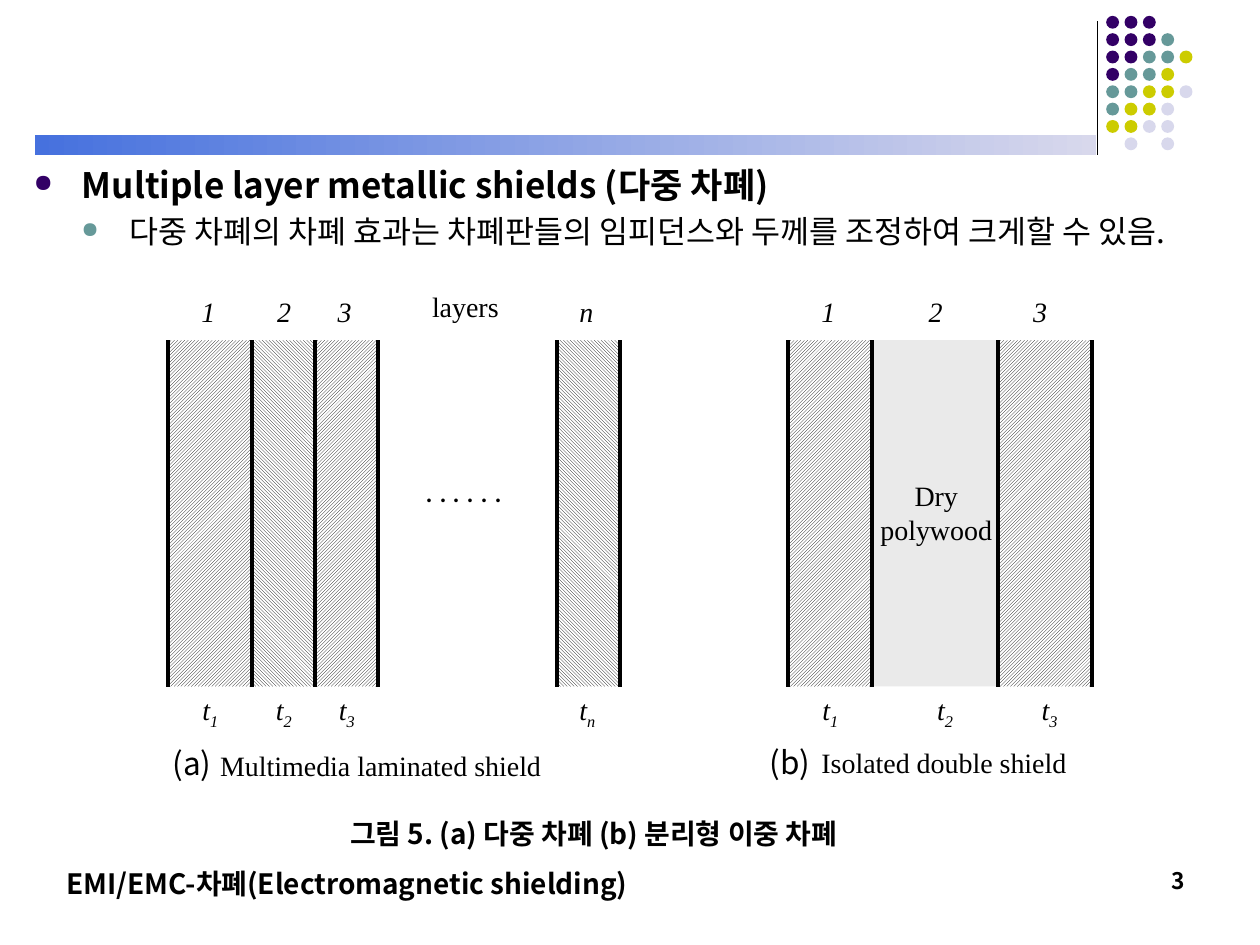
from lxml import etree
from pptx import Presentation
from pptx.dml.color import RGBColor
from pptx.enum import dml, shapes, text
from pptx.oxml.ns import qn
from pptx.util import Cm, Pt

SANS, SERIF = "Noto Sans CJK KR", "Times New Roman"
BLACK = "000000"

# Content; all lengths in centimetres
BULLETS = [  # text, size, bold, bullet colour, indent, space before
    ("Multiple layer metallic shields (다중 차폐)", 20, True, "330066", 0.97, 0),
    ("다중 차폐의 차폐 효과는 차폐판들의 임피던스와 두께를 조정하여 크게할 수 있음.",
     18, False, "669999", 1.93, 3.6),
]
LAYERS = [  # left, right, fill, label, centre of number, centre of thickness
    (3.39, 5.08, "up", "1", 4.2, 4.24),
    (5.08, 6.35, "down", "2", 5.73, 5.72),
    (6.35, 7.62, "up", "3", 6.95, 6.99),
    (11.22, 12.49, "down", "n", 11.82, 11.84),
    (15.88, 17.57, "up", "1", 16.7, 16.74),
    (17.57, 20.11, "EAEAEA", "2", 18.86, 19.05),
    (20.11, 22.01, "up", "3", 20.97, 21.16),
]
LAYER_TOP, LAYER_HEIGHT = 6.86, 6.98
HATCHES = {
    "up": dml.MSO_PATTERN.LIGHT_UPWARD_DIAGONAL,
    "down": dml.MSO_PATTERN.LIGHT_DOWNWARD_DIAGONAL,
}
NOTES = [  # text, left, top, width, height, font, size, bold, align, wrap
    ("layers", 8.46, 5.72, 1.85, 0.94, SERIF, 16, False, "l", False),
    ("‥‥‥", 8.26, 9.63, 2.2, 0.94, SANS, 16, False, "l", False),
    ("Dry\npolywood", 17.48, 9.53, 2.79, 1.62, SERIF, 16, False, "c", False),
    ("(a)", 3.23, 14.88, 1.35, 1.02, SANS, 18, False, "l", False),
    ("Multimedia laminated shield", 4.19, 14.96, 7.03, 0.94, SERIF, 16, False, "l", False),
    ("(b)", 15.27, 14.86, 1.37, 1.02, SANS, 18, False, "l", False),
    ("Isolated double shield", 16.31, 14.91, 5.49, 0.94, SERIF, 16, False, "l", False),
    ("그림 5. (a) 다중 차폐 (b) 분리형 이중 차폐",
     6.81, 16.33, 11.81, 0.94, SANS, 16, True, "l", True),
    ("EMI/EMC-차폐(Electromagnetic shielding)",
     1.09, 17.35, 15.62, 1.27, SANS, 16, True, "l", True),
    ("3", 18.21, 17.35, 5.92, 1.27, SANS, 13, True, "r", True),
]
DOT_ROWS = ["PPP", "PPPT", "PPTTY", "PTTY", "TTYYL", "TYYL", "YYLL", "-L-L"]
DOT_COLOURS = {"P": "330066", "T": "669999", "Y": "CCCC00", "L": "D8D8EC"}
ALIGN = {"l": text.PP_ALIGN.LEFT, "c": text.PP_ALIGN.CENTER, "r": text.PP_ALIGN.RIGHT}

deck = Presentation()
deck.slide_width, deck.slide_height = Cm(25.4), Cm(19.05)
page = deck.slides.add_slide(deck.slide_layouts[6])


def colour(value):
    return RGBColor.from_string(value)


def add_block(kind, left, top, width, height, fill=None):
    block = page.shapes.add_shape(kind, Cm(left), Cm(top), Cm(width), Cm(height))
    block.shadow.inherit = False
    block.line.fill.background()
    if fill in HATCHES:
        block.fill.patterned()
        block.fill.pattern = HATCHES[fill]
        block.fill.fore_color.rgb = colour(BLACK)
        block.fill.back_color.rgb = colour("FFFFFF")
    elif fill:
        block.fill.solid()
        block.fill.fore_color.rgb = colour(fill)
    return block


def add_upright(x, top, bottom, width):
    line = page.shapes.add_connector(
        shapes.MSO_CONNECTOR.STRAIGHT, Cm(x), Cm(top), Cm(x), Cm(bottom))
    line.line.color.rgb = colour(BLACK)
    line.line.width = Pt(width)
    etree.SubElement(line._element.spPr, qn("a:effectLst"))


def add_box(left, top, width, height, wrap=True):
    box = page.shapes.add_textbox(Cm(left), Cm(top), Cm(width), Cm(height))
    box.text_frame.word_wrap = wrap
    return box.text_frame


def style(para, name, size, bold=False, italic=False):
    font = para.font
    font.size, font.bold, font.italic = Pt(size), bold, italic
    font.color.rgb = colour(BLACK)
    font.name = name
    etree.SubElement(font._element, qn("a:ea"), typeface=name)


def add_label(centre, top, base, subscript=""):
    """Italic label centred on a layer, with an optional subscript."""
    width = 0.86
    para = add_box(centre - width / 2, top, width, 0.94, False).paragraphs[0]
    para.alignment = ALIGN["c"]
    para.add_run().text = base
    if subscript:
        span = para.add_run()
        span.text = subscript
        span.font._element.set("baseline", "-25000")
    style(para, SERIF, 16, italic=True)


# Corner ornament and gradient bar
add_upright(22.12, 0.43, 3.12, 0.75)
for row, codes in enumerate(DOT_ROWS):
    for column, code in enumerate(codes):
        if code in DOT_COLOURS:
            add_block(shapes.MSO_SHAPE.OVAL, 22.3 + 0.37 * column, 0.32 + 0.35 * row,
                      0.26, 0.26, DOT_COLOURS[code])
bar = add_block(shapes.MSO_SHAPE.RECTANGLE, 0.7, 2.73, 21.4, 0.4)
bar.fill.gradient()
bar.fill.gradient_angle = 0
for stop, position, shade in zip(bar.fill.gradient_stops, (0, 1), ("4671DE", "D8D8EC")):
    stop.position = position
    stop.color.rgb = colour(shade)

# Bulleted text
frame = add_box(0.43, 3.18, 24.56, 3.6)
for index, (words, size, bold, bullet, indent, before) in enumerate(BULLETS):
    para = frame.add_paragraph() if index else frame.paragraphs[0]
    para.text = words
    para.level = index
    para.space_before = Pt(before)
    props = para._p.get_or_add_pPr()
    props.set("marL", str(Cm(indent)))
    props.set("indent", str(-Cm(0.97)))
    tint = etree.SubElement(props, qn("a:buClr"))
    etree.SubElement(tint, qn("a:srgbClr"), val=bullet)
    etree.SubElement(props, qn("a:buSzPct"), val="70000")
    etree.SubElement(props, qn("a:buChar"), char="●")
    style(para, SANS, size, bold)

# Shield layers, their edges and labels
bottom = LAYER_TOP + LAYER_HEIGHT
for left, right, fill, *_ in LAYERS:
    add_block(shapes.MSO_SHAPE.RECTANGLE, left, LAYER_TOP, right - left, LAYER_HEIGHT, fill)
for edge in sorted({x for layer in LAYERS for x in layer[:2]}):
    add_upright(edge, LAYER_TOP, bottom, 2.25)
for _, _, _, label, number_x, thickness_x in LAYERS:
    add_label(number_x, 5.82, label)
    add_label(thickness_x, bottom, "t", label)

# Captions, notes and footer
for words, left, top, width, height, name, size, bold, align, wrap in NOTES:
    frame = add_box(left, top, width, height, wrap)
    frame.text = words
    for para in frame.paragraphs:
        para.alignment = ALIGN[align]
        style(para, name, size, bold)

deck.save("out.pptx")
